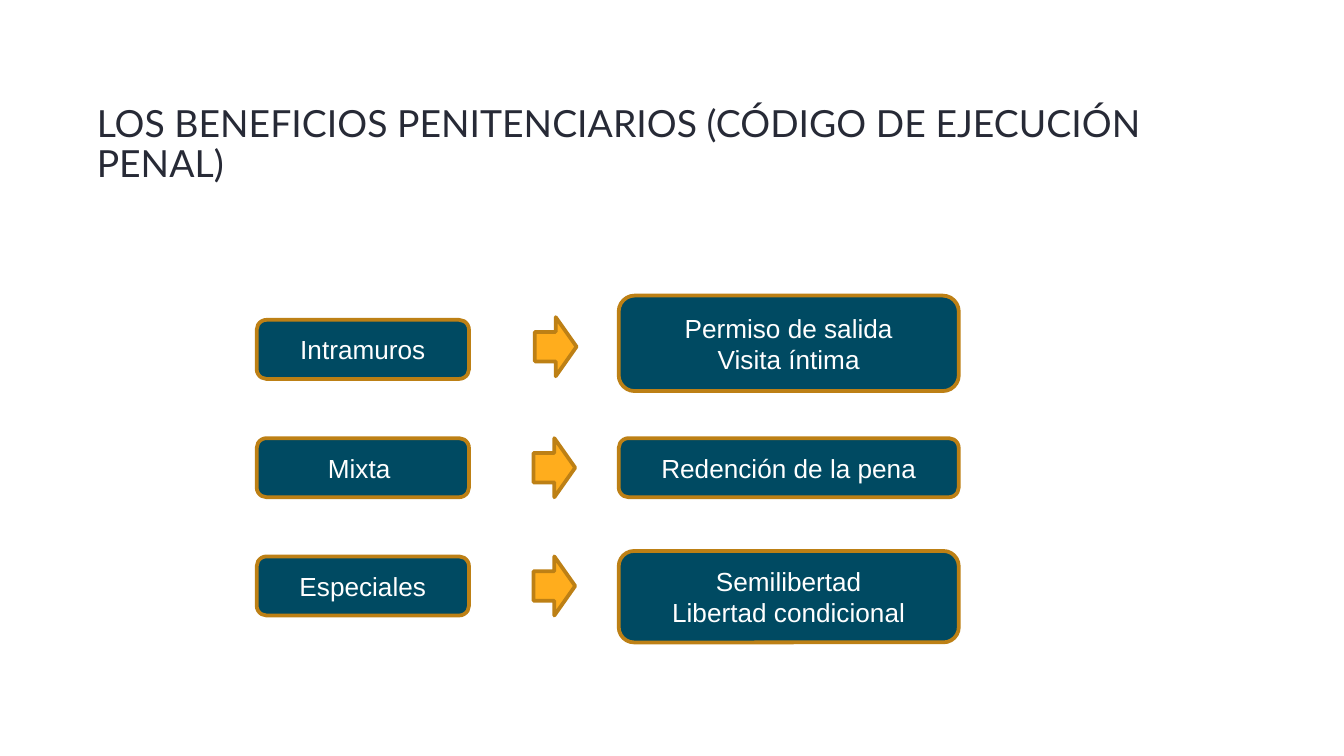
from dataclasses import dataclass

from pptx import Presentation
from pptx.dml.color import RGBColor
from pptx.enum.shapes import MSO_SHAPE
from pptx.enum.text import MSO_ANCHOR, PP_ALIGN
from pptx.util import Inches, Pt

ROUND = MSO_SHAPE.ROUNDED_RECTANGLE
ARROW = MSO_SHAPE.RIGHT_ARROW
MIDDLE = MSO_ANCHOR.MIDDLE
CENTER = PP_ALIGN.CENTER

# A 16:9 page
WIDTH = Inches(10)
HEIGHT = WIDTH * 9 // 16


@dataclass(frozen=True)
class Theme:
    ink: RGBColor = RGBColor.from_string("272A36")
    fill: RGBColor = RGBColor.from_string("004A62")
    gold: RGBColor = RGBColor.from_string("FFAD1D")
    edge: RGBColor = RGBColor.from_string("BD8015")
    white: RGBColor = RGBColor.from_string("FFFFFF")
    head: str = "Lato"
    body: str = "Arial"
    big: int = 20
    small: int = 14
    line: int = 2


THEME = Theme()

# Type, benefits, top and height of the benefits, arrow shift (% of the box)
ROWS = [
    ("Intramuros", "Permiso de salida\nVisita íntima", 0, 27.52, (0.19, -0.78)),
    ("Mixta ", "Redención de la pena", 41.09, 17.05, (0, 0)),
    ("Especiales", "Semilibertad\nLibertad condicional", 73.64, 26.36, (0, 0)),
]
# Row grid and columns (% of the box)
TOP, STEP, TALL = 6.98, 34.11, 17.05
KIND, POINT, GAIN = (0, 30.27), (39.46, 5.94), (51.6, 48.47)


def part(box, left, top, width, height):
    """Return the area at the given percentages of a box."""
    x, y, w, h = box
    return (int(x + w * left / 100), int(y + h * top / 100),
            int(w * width / 100), int(h * height / 100))


def style(frame, font, size, color):
    for para in frame.paragraphs:
        for run in para.runs:
            run.font.name = font
            run.font.size = Pt(size)
            run.font.color.rgb = color


def add_block(slide, kind, area, fill, text=""):
    block = slide.shapes.add_shape(kind, *area)
    block.shadow.inherit = False
    block.fill.solid()
    block.fill.fore_color.rgb = fill
    block.line.color.rgb = THEME.edge
    block.line.width = Pt(THEME.line)
    if text:
        frame = block.text_frame
        frame.text = text
        frame.word_wrap = True
        frame.vertical_anchor = MIDDLE
        for para in frame.paragraphs:
            para.alignment = CENTER
        style(frame, THEME.body, THEME.small, THEME.white)


def add_title(slide, box, text):
    frame = slide.shapes.add_textbox(*box).text_frame
    frame.margin_left = frame.margin_right = 0
    frame.margin_top = frame.margin_bottom = 0
    frame.word_wrap = True
    frame.vertical_anchor = MIDDLE
    frame.text = text
    frame.paragraphs[0].line_spacing = 0.9
    style(frame, THEME.head, THEME.big, THEME.ink)


def add_rows(slide, box):
    for i, (name, gains, top, tall, (dx, dy)) in enumerate(ROWS):
        y = TOP + i * STEP
        # Type of benefit
        area = part(box, KIND[0], y, KIND[1], TALL)
        add_block(slide, ROUND, area, THEME.fill, name)
        # Arrow
        area = part(box, POINT[0] + dx, y + dy, POINT[1], TALL)
        add_block(slide, ARROW, area, THEME.gold)
        # Benefits
        area = part(box, GAIN[0], top, GAIN[1], tall)
        add_block(slide, ROUND, area, THEME.fill, gains)


def main():
    deck = Presentation()
    deck.slide_width, deck.slide_height = WIDTH, HEIGHT
    slide = deck.slides.add_slide(deck.slide_layouts[6])
    page = (0, 0, WIDTH, HEIGHT)
    add_title(slide, part(page, 7.2, 12.92, 85.8, 12.62),
              "LOS BENEFICIOS PENITENCIARIOS (CÓDIGO DE EJECUCIÓN PENAL)")
    add_rows(slide, part(page, 19.1, 39.11, 52.2, 45.87))
    deck.save("out.pptx")


if __name__ == "__main__":
    main()
